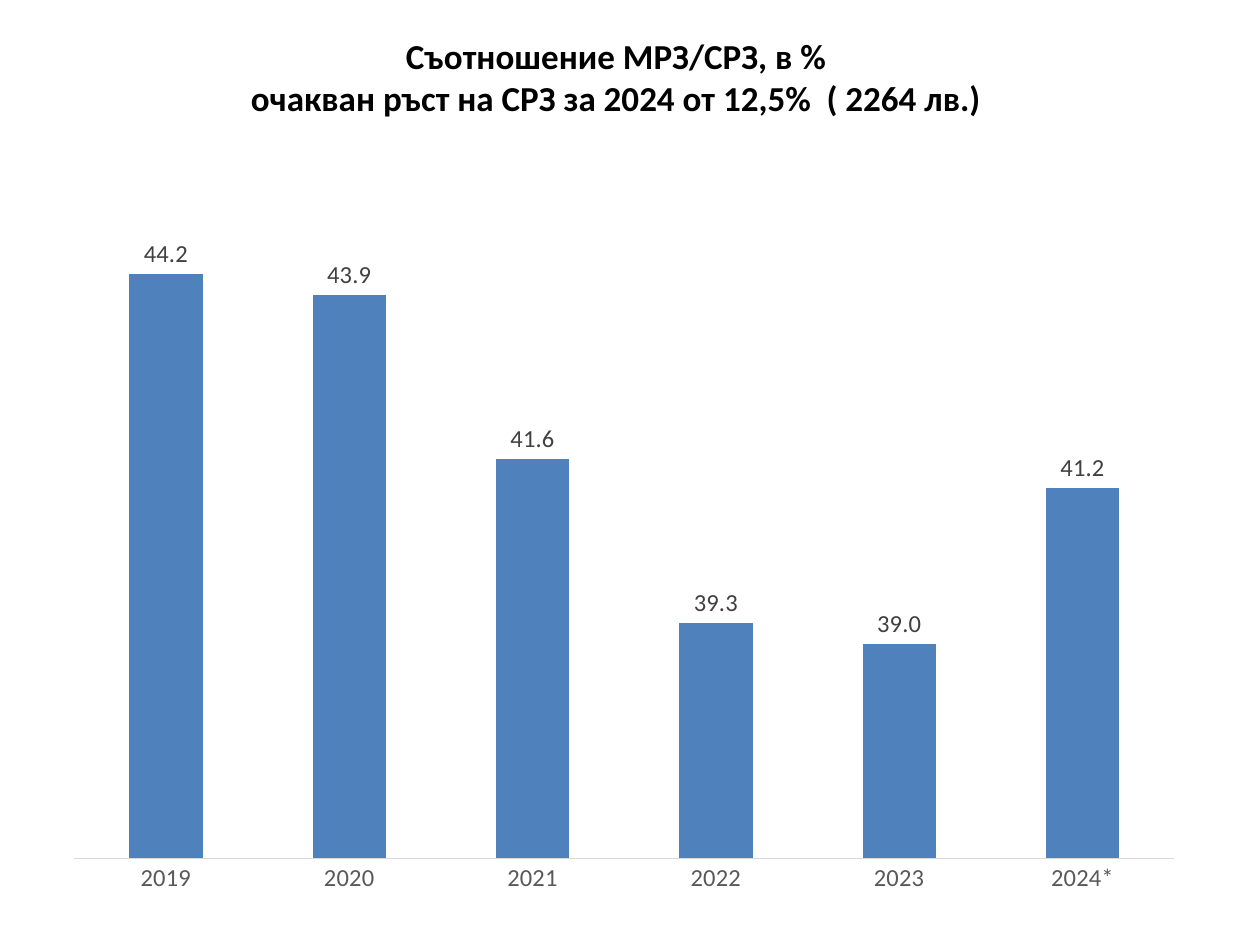
from lxml.etree import SubElement
from pptx import Presentation
from pptx.chart.data import CategoryChartData
from pptx.dml.color import RGBColor
from pptx.enum.chart import XL_CHART_TYPE, XL_LABEL_POSITION, XL_TICK_MARK
from pptx.enum.text import MSO_ANCHOR, PP_ALIGN
from pptx.oxml.ns import qn
from pptx.util import Inches, Pt

# Content
TITLE_LINES = ["Съотношение МРЗ/СРЗ, в %",
               "очакван ръст на СРЗ за 2024 от 12,5%  ( 2264 лв.)"]
RATIOS = {"2019": 44.2, "2020": 43.9, "2021": 41.6,
          "2022": 39.3, "2023": 39.0, "2024*": 41.2}

# Style and geometry
FONT = "Calibri"
COLORS = {"title": "000000", "bar": "4F81BD", "label": "404040",
          "axis_text": "595959", "axis_line": "D9D9D9"}
TITLE_AREA = (0.35, 0, 9.08, 1.21)
CHART_AREA = (0.5, 1.55, 9, 5.66)
PLOT_SHARES = {"x": 0.01, "y": 0.03, "w": 0.97, "h": 0.9}
AXIS_RANGE = (36, 45)


def color(name):
    return RGBColor.from_string(COLORS[name])


def style_font(font, size, color_name, bold=False):
    font.name = FONT
    font.size = Pt(size)
    font.bold = bold
    font.color.rgb = color(color_name)


def place_plot(chart, shares):
    """Fix the inner plot area as shares of the chart's size."""
    plot_area = chart._chartSpace.chart.plotArea
    for old_layout in plot_area.findall(qn("c:layout")):
        plot_area.remove(old_layout)
    layout = SubElement(plot_area, qn("c:layout"))
    plot_area.insert(0, layout)
    manual = SubElement(layout, qn("c:manualLayout"))
    settings = [("layoutTarget", "inner"), ("xMode", "edge"), ("yMode", "edge")]
    for tag, value in settings + list(shares.items()):
        SubElement(manual, qn(f"c:{tag}")).set("val", str(value))


deck = Presentation()
deck.slide_width, deck.slide_height = Inches(10), Inches(7.5)
page = deck.slides.add_slide(deck.slide_layouts[6])

# Title
box = page.shapes.add_textbox(*map(Inches, TITLE_AREA))
frame = box.text_frame
frame.word_wrap = True
frame.vertical_anchor = MSO_ANCHOR.MIDDLE
para = frame.paragraphs[0]
para.alignment = PP_ALIGN.CENTER
for index, line in enumerate(TITLE_LINES):
    if index:
        para.add_line_break()
    span = para.add_run()
    span.text = line
    style_font(span.font, 20, "title", bold=True)

# Column chart
data = CategoryChartData(number_format="0.0")
data.categories = list(RATIOS)
data.add_series("Series 1", list(RATIOS.values()))
chart = page.shapes.add_chart(XL_CHART_TYPE.COLUMN_CLUSTERED,
                              *map(Inches, CHART_AREA), data).chart
chart.has_title = False
chart.has_legend = False
style_font(chart.font, 10, "title")
place_plot(chart, PLOT_SHARES)

plot = chart.plots[0]
plot.gap_width = 150
plot.overlap = -25
plot.vary_by_categories = False
fill = plot.series[0].format.fill
fill.solid()
fill.fore_color.rgb = color("bar")

# Value labels
plot.has_data_labels = True
labels = plot.data_labels
labels.show_value = True
labels.position = XL_LABEL_POSITION.OUTSIDE_END
labels.number_format = "0.0"
labels.number_format_is_linked = False
style_font(labels.font, 14, "label")

# Axes
years = chart.category_axis
years.major_tick_mark = XL_TICK_MARK.NONE
years.format.line.color.rgb = color("axis_line")
years.format.line.width = Pt(0.75)
style_font(years.tick_labels.font, 14, "axis_text")

values = chart.value_axis
values.minimum_scale, values.maximum_scale = AXIS_RANGE
values.has_major_gridlines = False
values.tick_labels.number_format = "0.0"
values.tick_labels.number_format_is_linked = False
values.visible = False

deck.save("out.pptx")
